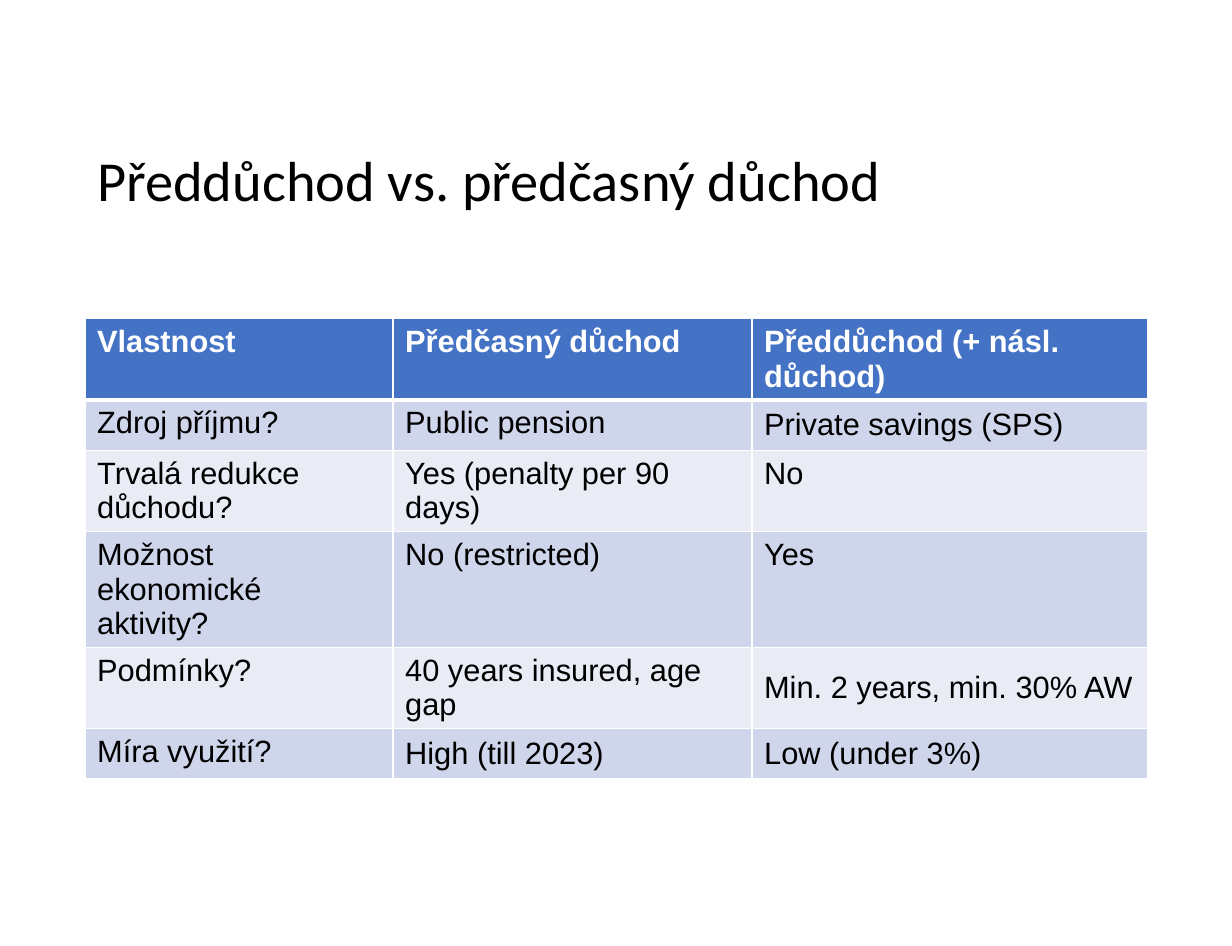
from dataclasses import dataclass

from lxml.etree import SubElement as Sub
from pptx import Presentation
from pptx.dml.color import RGBColor
from pptx.enum.text import MSO_ANCHOR as Anchor, PP_ALIGN as Align
from pptx.oxml.ns import qn
from pptx.util import Cm, Pt

ROWS = [
    ["Vlastnost", "Předčasný důchod", "Předdůchod (+ násl. důchod)"],
    ["Zdroj příjmu?", "Public pension", "Private savings (SPS)"],
    ["Trvalá redukce důchodu?", "Yes (penalty per 90 days)", "No"],
    ["Možnost ekonomické aktivity?", "No (restricted)", "Yes"],
    ["Podmínky?", "40 years insured, age gap", "Min. 2 years, min. 30% AW"],
    ["Míra využití?", "High (till 2023)", "Low (under 3%)"],
]
WIDTHS = [6.35, 7.4, 8.16]
HEIGHT = 1.04
MIDDLE = {(1, 2), (4, 2), (5, 1), (5, 2)}


def color(code):
    return RGBColor.from_string(code)


@dataclass
class Deck:
    """Holds the style and the current slide."""

    slide: object
    ink: str = "000000"
    light: str = "FFFFFF"
    head: str = "4472C4"
    bands: tuple = ("E9EBF5", "CFD5EA")

    def text(self, para, text, font, size, ink, bold=False):
        run = para.add_run()
        run.text = text
        run.font.name = font
        run.font.size = Pt(size)
        run.font.bold = bold
        run.font.color.rgb = color(ink)

    def title(self, text, left, top, width, height):
        box = self.slide.shapes.title
        box.left, box.top = Cm(left), Cm(top)
        box.width, box.height = Cm(width), Cm(height)
        frame = box.text_frame
        frame.word_wrap = True
        frame.vertical_anchor = Anchor.MIDDLE
        para = frame.paragraphs[0]
        para.alignment = Align.LEFT
        para.line_spacing = 0.9
        self.text(para, text, "Calibri", 33, self.ink)

    def border(self, cell, row):
        props = cell._tc.get_or_add_tcPr()
        heavy = {(0, "B"), (1, "T")}
        for side in "LRTB":
            width = 3 if (row, side) in heavy else 1
            line = Sub(props, qn(f"a:ln{side}"), w=str(Pt(width)))
            fill = Sub(line, qn("a:solidFill"))
            Sub(fill, qn("a:srgbClr"), val=self.light)

    def cell(self, cell, text, row, col):
        first = row == 0
        self.border(cell, row)
        cell.fill.solid()
        cell.fill.fore_color.rgb = color(self.head if first else self.bands[row % 2])
        cell.vertical_anchor = Anchor.MIDDLE if (row, col) in MIDDLE else Anchor.TOP
        ink = self.light if first else self.ink
        self.text(cell.text_frame.paragraphs[0], text, "Arial", 18, ink, first)

    def table(self, rows, widths, height, left, top):
        size = Cm(sum(widths)), Cm(height * len(rows))
        frame = self.slide.shapes.add_table(
            len(rows), len(widths), Cm(left), Cm(top), *size
        )
        grid = frame.table
        for col, width in zip(grid.columns, widths):
            col.width = Cm(width)
        for r, texts in enumerate(rows):
            grid.rows[r].height = Cm(height)
            for c, text in enumerate(texts):
                self.cell(grid.cell(r, c), text, r, c)


def main():
    show = Presentation()
    show.slide_width, show.slide_height = Cm(25.4), Cm(19.51)
    deck = Deck(show.slides.add_slide(show.slide_layouts[5]))
    deck.title("Předdůchod vs. předčasný důchod", 1.75, 2.74, 21.92, 2.06)
    deck.table(ROWS, WIDTHS, HEIGHT, 1.75, 6.57)
    show.save("out.pptx")


if __name__ == "__main__":
    main()
